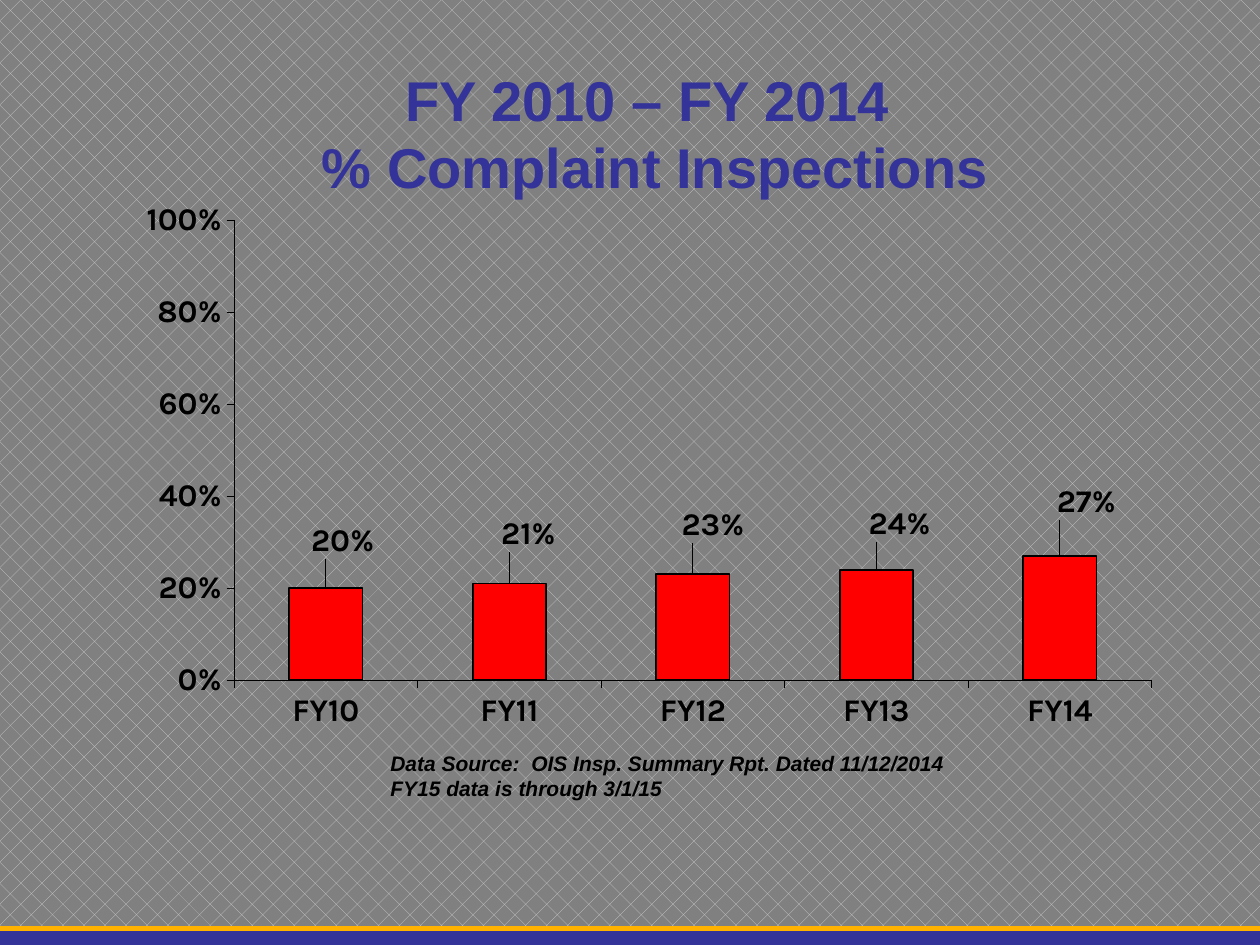
"""Build the slide on the share of complaint inspections by fiscal year."""
from dataclasses import dataclass

from lxml.etree import SubElement
from pptx import Presentation
from pptx.chart.data import CategoryChartData
from pptx.dml.color import RGBColor
from pptx.enum.chart import XL_CHART_TYPE, XL_LABEL_POSITION, XL_TICK_LABEL_POSITION, XL_TICK_MARK
from pptx.enum.dml import MSO_PATTERN
from pptx.enum.shapes import MSO_SHAPE
from pptx.enum.text import MSO_ANCHOR, MSO_AUTO_SIZE, PP_ALIGN
from pptx.oxml.ns import qn
from pptx.util import Inches, Pt

WIDTH, HEIGHT = Inches(10), Inches(7.5)


@dataclass(frozen=True)
class Theme:
    """Colours, fonts and type sizes of the slide."""
    ink: RGBColor = RGBColor(0, 0, 0)
    navy: RGBColor = RGBColor(0x33, 0x33, 0x99)
    gold: RGBColor = RGBColor(0xFF, 0xB3, 0x00)
    red: RGBColor = RGBColor(0xFF, 0, 0)
    weave: RGBColor = RGBColor(0xCF, 0xCF, 0xCF)
    grey: RGBColor = RGBColor(0x80, 0x80, 0x80)
    sans: str = "Arial"
    plot: str = "Karla"
    head: int = 32
    label: int = 18
    note: int = 12


THEME = Theme()
RATES = {"FY10": 0.20, "FY11": 0.21, "FY12": 0.23, "FY13": 0.24, "FY14": 0.27}
SHIFTS = [(0.016, -0.043), (0.018, -0.047), (0.019, -0.047), (0.022, -0.04), (0.025, -0.056)]


def share(x, y, w, h):
    """Turn shares of the slide into a box of lengths."""
    return int(x * WIDTH), int(y * HEIGHT), int(w * WIDTH), int(h * HEIGHT)


def style(font, size, name, color, italic=None):
    """Set a bold font."""
    font.size, font.name, font.bold, font.italic = Pt(size), name, True, italic
    font.color.rgb = color


def layout(parent, index, **parts):
    """Insert a manual layout in a chart element."""
    node = SubElement(parent, qn("c:layout"))
    manual = SubElement(node, qn("c:manualLayout"))
    for tag, val in parts.items():
        SubElement(manual, qn(f"c:{tag}")).set("val", str(val))
    for old in parent.findall(qn("c:layout"))[:-1]:
        parent.remove(old)
    parent.insert(index, node)


def backdrop(slide):
    """Fill the background with a woven pattern."""
    fill = slide.background.fill
    fill.patterned()
    fill.pattern = MSO_PATTERN.DIAGONAL_BRICK
    fill.fore_color.rgb, fill.back_color.rgb = THEME.weave, THEME.grey


def footer(slide, box):
    """Draw the navy band with its gold upper edge."""
    x, y, w, h = box
    for color, part in ((THEME.navy, 1), (THEME.gold, 0.25)):
        band = slide.shapes.add_shape(MSO_SHAPE.RECTANGLE, x, y, w, int(h * part))
        band.shadow.inherit = False
        band.fill.solid()
        band.fill.fore_color.rgb = color
        band.line.fill.background()


def heading(slide, box):
    """Place and format the title."""
    title = slide.shapes.title
    title.left, title.top, title.width, title.height = box
    frame = title.text_frame
    frame.auto_size, frame.vertical_anchor = MSO_AUTO_SIZE.NONE, MSO_ANCHOR.MIDDLE
    para = frame.paragraphs[0]
    para.alignment = PP_ALIGN.CENTER
    for i, text in enumerate(("FY 2010 – FY 2014 ", "% Complaint Inspections")):
        if i:
            para.add_line_break()
        run = para.add_run()
        run.text = text
        style(run.font, THEME.head, THEME.sans, THEME.navy)


def axes(chart):
    """Format both axes and the value scale."""
    for axis in (chart.category_axis, chart.value_axis):
        axis.has_major_gridlines = False
        axis.major_tick_mark, axis.minor_tick_mark = XL_TICK_MARK.OUTSIDE, XL_TICK_MARK.NONE
        axis.format.line.color.rgb = THEME.ink
        axis.format.line.width = Pt(0.25)
        style(axis.tick_labels.font, THEME.label, THEME.plot, THEME.ink)
    chart.category_axis.tick_label_position = XL_TICK_LABEL_POSITION.LOW
    scale = chart.value_axis
    scale.minimum_scale, scale.maximum_scale, scale.major_unit = 0, 1, 0.2
    scale.tick_labels.number_format = "0%"
    scale.tick_labels.number_format_is_linked = False


def labels(plot):
    """Show the values, each moved off its column."""
    plot.has_data_labels = True
    marks = plot.data_labels
    marks.show_value = True
    marks.number_format, marks.number_format_is_linked = "0%", False
    style(marks.font, THEME.label, THEME.plot, THEME.ink)
    series = plot.series[0]
    for i in range(len(RATES)):
        mark = series.points[i].data_label
        mark.position = XL_LABEL_POSITION.OUTSIDE_END
        style(mark.font, THEME.label, THEME.plot, THEME.ink)
    for node, (x, y) in zip(series._element.xpath("c:dLbls/c:dLbl"), SHIFTS):
        layout(node, 1, x=x, y=y)


def columns(slide, box):
    """Chart the yearly rates as columns."""
    data = CategoryChartData(number_format="0%")
    data.categories = list(RATES)
    data.add_series("Series 1", list(RATES.values()))
    chart = slide.shapes.add_chart(XL_CHART_TYPE.COLUMN_CLUSTERED, *box, data).chart
    chart.has_legend = chart.has_title = False
    style(chart.font, THEME.label, THEME.plot, THEME.ink)
    plot = chart.plots[0]
    plot.gap_width, plot.vary_by_categories = 150, False
    look = plot.series[0].format
    look.fill.solid()
    look.fill.fore_color.rgb = THEME.red
    look.line.color.rgb = THEME.ink
    look.line.width = Pt(1)
    axes(chart)
    labels(plot)
    area = chart._chartSpace.xpath("c:chart/c:plotArea")[0]
    layout(area, 0, layoutTarget="inner", xMode="edge", yMode="edge",
           x=0.119, y=0.038, w=0.868, h=0.832)


def source(slide, box):
    """Write the note on the data source."""
    frame = slide.shapes.add_textbox(*box).text_frame
    frame.word_wrap, frame.auto_size = False, MSO_AUTO_SIZE.SHAPE_TO_FIT_TEXT
    lines = ("Data Source:  OIS Insp. Summary Rpt. Dated 11/12/2014", "FY15 data is through 3/1/15")
    for i, text in enumerate(lines):
        para = frame.add_paragraph() if i else frame.paragraphs[0]
        run = para.add_run()
        run.text = text
        style(run.font, THEME.note, THEME.sans, THEME.ink, True)


def main():
    """Build and save the slide."""
    deck = Presentation()
    deck.slide_width, deck.slide_height = WIDTH, HEIGHT
    slide = deck.slides.add_slide(deck.slide_layouts[5])
    backdrop(slide)
    footer(slide, share(0, 0.98, 1, 0.02))
    heading(slide, share(0.07, 0.08, 0.9, 0.12))
    columns(slide, (Inches(0.86), Inches(1.58), Inches(8.39), Inches(4.39)))
    source(slide, (Inches(3), Inches(5.91), Inches(4.64), Inches(0.5)))
    deck.save("out.pptx")


if __name__ == "__main__":
    main()
